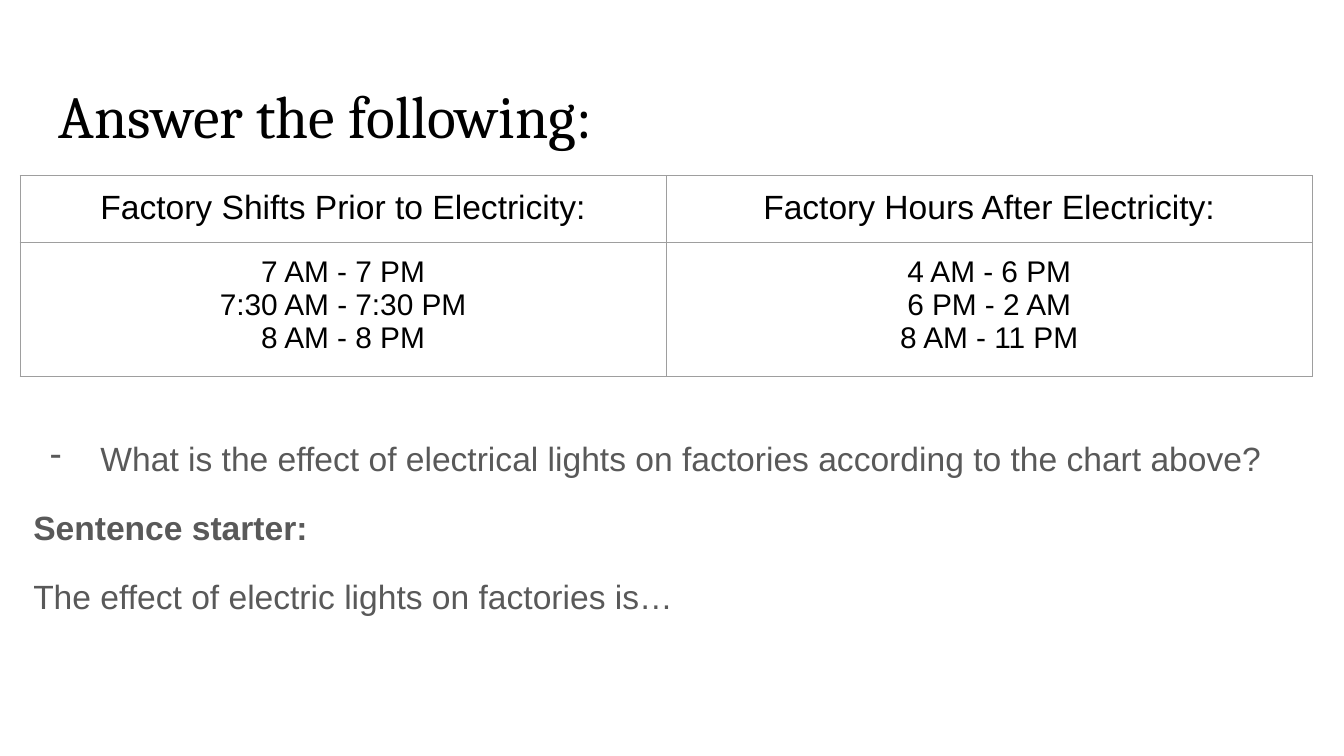
import pptx
import pptx.dml.color
import pptx.enum.text
import pptx.oxml
import pptx.oxml.ns
import pptx.util
from pptx.util import Cm, Pt

BLACK = pptx.dml.color.RGBColor(0x00, 0x00, 0x00)
GREY = pptx.dml.color.RGBColor(0x59, 0x59, 0x59)
BORDER = pptx.dml.color.RGBColor(0x9E, 0x9E, 0x9E)
NAMESPACE = pptx.oxml.ns.nsdecls("a")
INSET = Cm(0.25)


def style_text(frame, font_name, size, color):
    frame.word_wrap = True
    frame.margin_left = frame.margin_right = INSET
    frame.margin_top = frame.margin_bottom = INSET
    for para in frame.paragraphs:
        for span in para.runs:
            span.font.name = font_name
            span.font.size = Pt(size)
            span.font.color.rgb = color


def add_borders(cell):
    properties = cell._tc.get_or_add_tcPr()
    for side in ("lnL", "lnR", "lnT", "lnB"):
        properties.append(pptx.oxml.parse_xml(
            f'<a:{side} {NAMESPACE} w="{Pt(0.75)}"><a:solidFill>'
            f'<a:srgbClr val="{BORDER}"/></a:solidFill></a:{side}>'))


deck = pptx.Presentation()
deck.slide_width, deck.slide_height = Cm(25.4), Cm(14.29)
page = deck.slides.add_slide(deck.slide_layouts[5])

# Title
title = page.shapes.title
title.left, title.top, title.width, title.height = Cm(0.86), Cm(1.24), Cm(23.67), Cm(1.6)
title.text_frame.text = "Answer the following:"
title.text_frame.vertical_anchor = pptx.enum.text.MSO_ANCHOR.TOP
title.text_frame.auto_size = pptx.enum.text.MSO_AUTO_SIZE.NONE
title.text_frame.paragraphs[0].alignment = pptx.enum.text.PP_ALIGN.LEFT
style_text(title.text_frame, "Cambria", 32, BLACK)

# Question and sentence starter
box = page.shapes.add_textbox(Cm(0.38), Cm(7.92), Cm(24.41), Cm(5.82))
box.text_frame.text = "\n".join([
    "What is the effect of electrical lights on factories according to the chart above?",
    "Sentence starter:",
    "The effect of electric lights on factories is…",
])
style_text(box.text_frame, "Arial", 18, GREY)
question, starter, answer = box.text_frame.paragraphs
for para in (question, starter, answer):
    para.line_spacing = 1.15
for para in (starter, answer):
    para.space_before = Pt(12)
answer.space_after = Pt(12)
starter.runs[0].font.bold = True

bullet = question._p.get_or_add_pPr()
bullet.set("marL", str(Cm(1.27)))
bullet.set("indent", str(-Cm(0.95)))
bullet.append(pptx.oxml.parse_xml(
    f'<a:buClr {NAMESPACE}><a:srgbClr val="{GREY}"/></a:buClr>'))
bullet.append(pptx.oxml.parse_xml(f'<a:buChar {NAMESPACE} char="-"/>'))

# Shift table
rows = [
    (Cm(1.24), 18, ["Factory Shifts Prior to Electricity:",
                    "Factory Hours After Electricity:"]),
    (Cm(2.45), 16, ["7 AM - 7 PM\n7:30 AM - 7:30 PM\n8 AM - 8 PM",
                    "4 AM - 6 PM\n6 PM - 2 AM\n8 AM - 11 PM"]),
]
table = page.shapes.add_table(
    2, 2, Cm(0.38), Cm(3.32), Cm(24.42), Cm(3.69)).table
table.first_row = table.horz_banding = False
for row, (height, size, texts) in zip(table.rows, rows):
    row.height = height
    for cell, text in zip(row.cells, texts):
        cell.text_frame.text = text
        style_text(cell.text_frame, "Arial", size, BLACK)
        for para in cell.text_frame.paragraphs:
            para.alignment = pptx.enum.text.PP_ALIGN.CENTER
        cell.margin_left = cell.margin_right = INSET
        cell.margin_top = cell.margin_bottom = INSET
        add_borders(cell)
        cell.fill.background()

deck.save("out.pptx")
